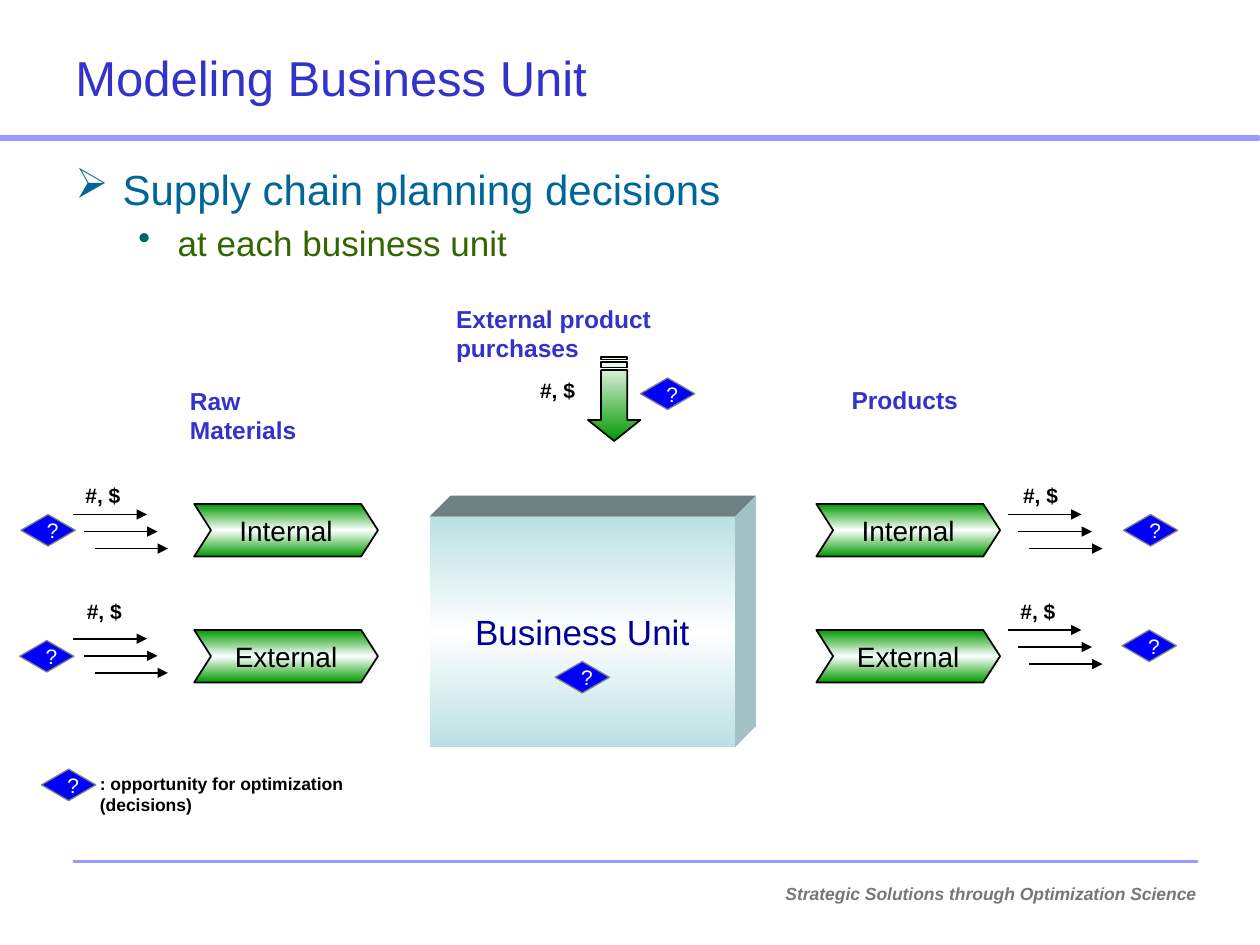
import copy
from dataclasses import dataclass

import pptx
import pptx.dml.color
import pptx.enum.shapes
import pptx.enum.text
import pptx.oxml
import pptx.oxml.ns
import pptx.util
from lxml import etree

Pt = pptx.util.Pt
qn = pptx.oxml.ns.qn
SHAPES = pptx.enum.shapes.MSO_SHAPE
ALIGN = pptx.enum.text.PP_ALIGN
ANCHOR = pptx.enum.text.MSO_ANCHOR

COLORS = {
    "title": "3333CC", "rule": "9999FF", "topic": "006699", "detail": "336600",
    "bullet": "006666", "unit_text": "000099", "unit": "BBE0E3", "unit_top": "6E8285",
    "unit_side": "A3C2C5", "green": "009900", "decision": "0000FF", "edge": "808080",
    "footer": "777777", "black": "000000", "white": "FFFFFF",
    "band_light": "D5D5D5", "band_dark": "A5A5A5", "glow_light": "EBEBEB", "glow_dark": "CECECE",
}


@dataclass
class Label:
    text: str
    left: float
    top: float
    width: float
    height: float
    size: float
    color: str
    bold: bool = False
    italic: bool = False
    align: ALIGN = ALIGN.LEFT
    anchor: ANCHOR = ANCHOR.TOP


@dataclass
class Flow:
    name: str
    chevron_left: float
    chevron_top: float
    arrows_left: float
    arrows_top: float
    note_left: float
    note_top: float


def rgb(name: str):
    """Return the named colour."""
    return pptx.dml.color.RGBColor.from_string(COLORS[name])


def write(para, text: str, size: float, color: str, **formats) -> None:
    """Add one formatted span to a paragraph."""
    span = para.add_run()
    span.text = text
    for key, value in {"name": "Arial", "size": Pt(size), **formats}.items():
        setattr(span.font, key, value)
    span.font.color.rgb = rgb(color)


def paint(shape, stops: list, angle: float = 0) -> None:
    """Fill a shape with one colour or evenly spaced gradient stops."""
    shape.shadow.inherit = False
    if len(stops) == 1:
        shape.fill.solid()
        shape.fill.fore_color.rgb = rgb(stops[0])
        return
    shape.fill.gradient()
    shape.fill.gradient_angle = angle
    stop_list = shape._element.spPr.find(".//" + qn("a:gsLst"))
    for _ in stops[2:]:
        stop_list.append(copy.deepcopy(stop_list[0]))
    for index, (stop, color) in enumerate(zip(shape.fill.gradient_stops, stops)):
        stop.position = index / (len(stops) - 1)
        stop.color.rgb = rgb(color)


def outline(shape, color: str = "", width: float = 1) -> None:
    """Draw the named outline, or none."""
    if color:
        shape.line.color.rgb = rgb(color)
        shape.line.width = Pt(width)
    else:
        shape.line.fill.background()


def add_box(page, kind, left: float, top: float, width: float, height: float):
    """Add a preset shape measured in points."""
    return page.shapes.add_shape(kind, Pt(left), Pt(top), Pt(width), Pt(height))


def add_outline(page, *contours):
    """Add one freeform made of closed contours."""
    points = [[(Pt(x), Pt(y)) for x, y in contour] for contour in contours]
    builder = page.shapes.build_freeform(*points[0][0], scale=1.0)
    builder.add_line_segments(points[0][1:], close=True)
    for contour in points[1:]:
        builder.move_to(*contour[0])
        builder.add_line_segments(contour[1:], close=True)
    return builder.convert_to_shape()


def add_label(page, label: Label) -> None:
    """Add a text box with one paragraph for each line."""
    box = page.shapes.add_textbox(Pt(label.left), Pt(label.top), Pt(label.width), Pt(label.height))
    frame = box.text_frame
    frame.word_wrap = True
    frame.vertical_anchor = label.anchor
    for index, line in enumerate(label.text.split("\n")):
        para = frame.add_paragraph() if index else frame.paragraphs[0]
        para.alignment = label.align
        write(para, line, label.size, label.color, bold=label.bold, italic=label.italic)


def caption(shape, text: str, size: float, color: str, align=ALIGN.CENTER) -> None:
    """Write unwrapped text in the middle of a shape."""
    frame = shape.text_frame
    frame.word_wrap = False
    frame.vertical_anchor = ANCHOR.MIDDLE
    frame.paragraphs[0].alignment = align
    write(frame.paragraphs[0], text, size, color)


def add_rule(page, left: float, top: float, width: float, stops: list, weight: float) -> None:
    """Add a thin horizontal rule."""
    rule = add_box(page, SHAPES.RECTANGLE, left, top, width, 0.75)
    paint(rule, stops)
    outline(rule, "rule", weight)


def add_arrow(page, left: float, top: float) -> None:
    """Add a short arrow pointing right."""
    arrow = page.shapes.add_connector(
        pptx.enum.shapes.MSO_CONNECTOR.STRAIGHT, Pt(left), Pt(top), Pt(left + 42), Pt(top))
    outline(arrow, "black")
    etree.SubElement(arrow.line._get_or_add_ln(), qn("a:tailEnd"), type="triangle")
    etree.SubElement(arrow._element.spPr, qn("a:effectLst"))


def add_decision(page, left: float, top: float) -> None:
    """Add a diamond marking a decision."""
    diamond = add_box(page, SHAPES.FLOWCHART_DECISION, left, top, 31, 18)
    paint(diamond, ["decision"])
    outline(diamond, "edge", 0.75)
    caption(diamond, "?", 12, "white", ALIGN.LEFT)


def add_note(page, left: float, top: float) -> None:
    """Add the quantity and cost mark."""
    add_label(page, Label("#, $", left, top, 38, 21.6, 12, "black", bold=True))


def add_flow(page, flow: Flow) -> None:
    """Add a chevron with its three arrows and mark."""
    chevron = add_box(page, SHAPES.CHEVRON, flow.chevron_left, flow.chevron_top, 105, 30)
    chevron.adjustments[0] = 0.32
    paint(chevron, ["green", "white", "green"], 270)
    outline(chevron, "black")
    caption(chevron, flow.name, 16, "black")
    for step in range(3):
        add_arrow(page, flow.arrows_left + 6 * step, flow.arrows_top + 9.75 * step)
    add_note(page, flow.note_left, flow.note_top)


def add_bullets(page) -> None:
    """Add the two-level bullet text."""
    frame = page.shapes.add_textbox(Pt(36), Pt(90), Pt(648), Pt(72)).text_frame
    frame.word_wrap = True
    rows = [
        ("Supply chain planning decisions", "➢", 24, "topic", "topic", 27, 27, 0),
        ("at each business unit", "•", 20, "detail", "bullet", 58.5, 22.5, 4),
    ]
    for level, (text, mark, size, color, mark_color, margin, hang, before) in enumerate(rows):
        para = frame.add_paragraph() if level else frame.paragraphs[0]
        para.level = level
        properties = para._p.get_or_add_pPr()
        properties.set("marL", str(Pt(margin)))
        properties.set("indent", str(-Pt(hang)))
        tint = etree.SubElement(properties, qn("a:buClr"))
        etree.SubElement(tint, qn("a:srgbClr"), val=COLORS[mark_color])
        etree.SubElement(properties, qn("a:buChar"), char=mark)
        para.space_before = Pt(before)
        write(para, text, size, color)


def add_unit(page) -> None:
    """Add the business unit block with its top and side faces."""
    left, top, right, bottom, depth = 245.5, 295.2, 420, 427, 12
    upper = [(left, top), (left + depth, top - depth), (right + depth, top - depth), (right, top)]
    side = [(right, top), (right + depth, top - depth), (right + depth, bottom - depth), (right, bottom)]
    for contour, color in ((upper, "unit_top"), (side, "unit_side")):
        face = add_outline(page, contour)
        paint(face, [color])
        outline(face)
    front = add_box(page, SHAPES.RECTANGLE, left, top, right - left, bottom - top)
    paint(front, ["unit", "white", "unit"], 270)
    outline(front)
    caption(front, "Business Unit", 20, "unit_text")


def add_purchase_arrow(page) -> None:
    """Add the striped arrow pointing down."""
    head = [(358.5, 211.5), (358.5, 240), (366, 240), (351, 252), (336, 240), (343.5, 240), (343.5, 211.5)]
    stripes = [[(343.5, top), (358.5, top), (358.5, low), (343.5, low)]
               for top, low in ((207, 210), (204, 205.5))]
    arrow = add_outline(page, head, *stripes)
    paint(arrow, ["white", "green"], 270)
    outline(arrow, "black")


def main() -> None:
    """Build the business unit page."""
    deck = pptx.Presentation()
    deck.slide_width, deck.slide_height = Pt(720), Pt(540)
    page = deck.slides.add_slide(deck.slide_layouts[6])
    add_rule(page, 0, 77.75, 719.5, ["band_light", "glow_light", "band_light"], 0.75)
    add_rule(page, 0, 79.25, 719.5, ["band_dark", "glow_dark", "band_dark"], 0.75)
    for left in (72, 42):
        add_rule(page, left, 491.75, 612, ["rule"], 0.2)
    add_bullets(page)
    add_unit(page)
    add_purchase_arrow(page)
    for flow in (
        Flow("Internal", 466.5, 288, 576, 294, 577.5, 272),
        Flow("External", 466.5, 360, 576, 360, 576, 338.5),
        Flow("Internal", 111, 288, 42, 294, 41.75, 272),
        Flow("External", 111, 360, 42, 365, 42.5, 338.5),
    ):
        add_flow(page, flow)
    add_note(page, 301.5, 212)
    for label in (
        Label("Modeling Business Unit", 36, 21.6, 648, 44.6, 28, "title", anchor=ANCHOR.MIDDLE),
        Label("External product purchases", 253.5, 170, 135, 41, 14, "title", bold=True),
        Label("Raw Materials", 101.5, 217, 86, 41, 14, "title", bold=True),
        Label("Products", 479.5, 216.5, 84, 24, 14, "title", bold=True),
        Label(": opportunity for optimization\n(decisions)", 50, 438, 160, 31, 10, "black", bold=True),
        Label("Strategic Solutions through Optimization Science", 425.5, 501, 265, 18, 10,
              "footer", bold=True, italic=True, align=ALIGN.RIGHT),
    ):
        add_label(page, label)
    for left, top in ((23.75, 439.5), (12, 294), (11.25, 366), (317.25, 378),
                      (641.25, 360), (642, 294), (366, 216)):
        add_decision(page, left, top)
    deck.save("out.pptx")


if __name__ == "__main__":
    main()
